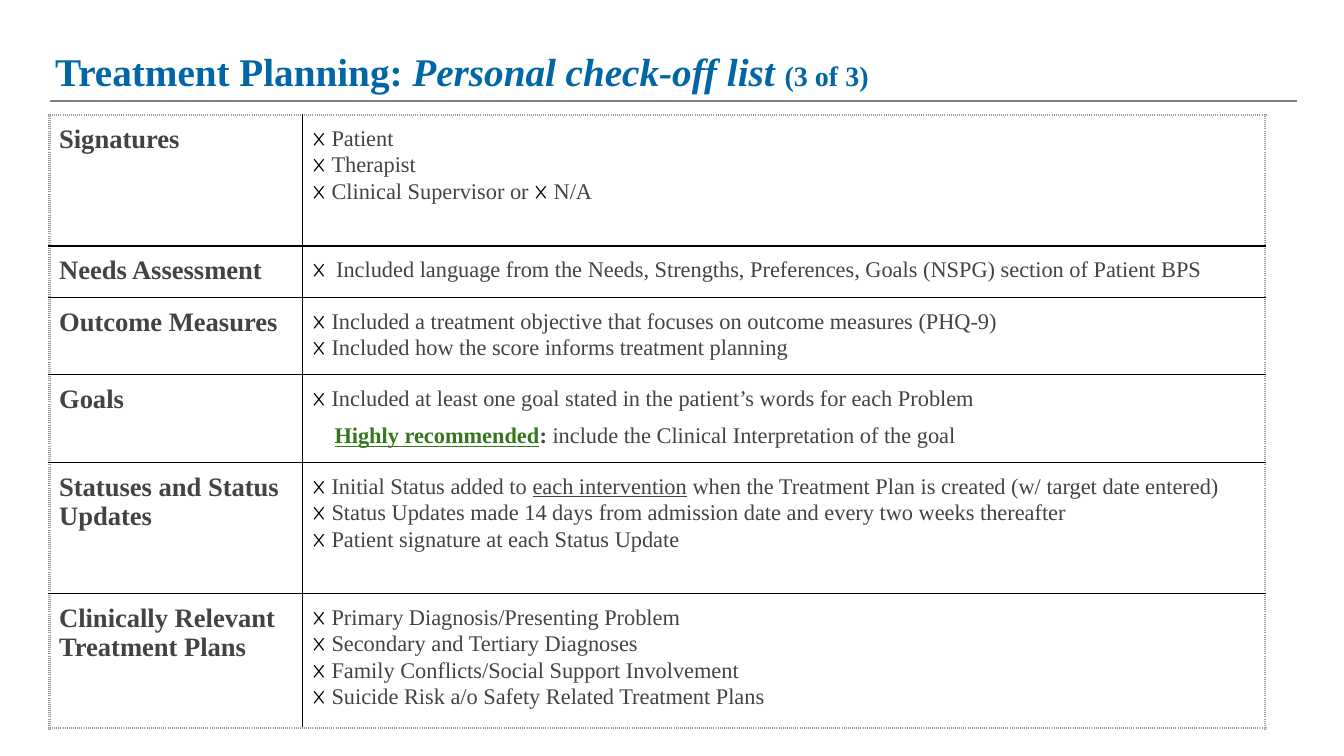
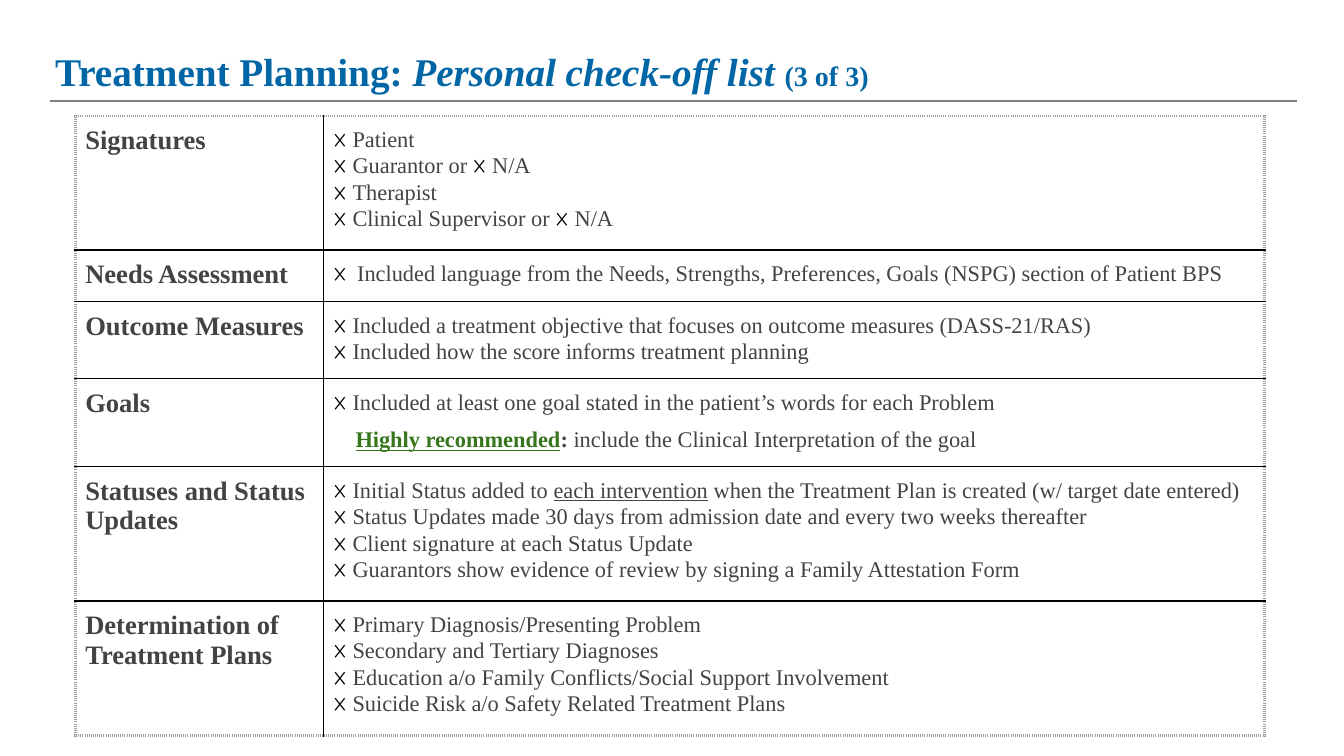
"""Build two treatment planning check-off slides."""
from lxml import etree
from pptx import Presentation
from pptx.dml.color import RGBColor
from pptx.enum.shapes import MSO_CONNECTOR
from pptx.enum.text import MSO_ANCHOR
from pptx.oxml.ns import qn
from pptx.util import Cm, Pt

STRAIGHT = MSO_CONNECTOR.STRAIGHT
TOP = MSO_ANCHOR.TOP
BLUE = RGBColor(0x00, 0x66, 0xA6)
GREEN = RGBColor(0x38, 0x76, 0x1D)
CHARCOAL = RGBColor(0x43, 0x43, 0x43)
BLACK = RGBColor(0x00, 0x00, 0x00)
GREY = RGBColor(0x7F, 0x7F, 0x7F)
FRAME_GREY = RGBColor(0x9E, 0x9E, 0x9E)
FONT = "Times New Roman"
MARK = "𐄂 "
INSET = Cm(0.25)
TAB_STOP = Cm(0.6)

STYLES = {
    "title": {"size": Pt(28), "color": BLUE, "bold": True},
    "subtitle": {"size": Pt(28), "color": BLUE, "bold": True, "italic": True},
    "count": {"size": Pt(20), "color": BLUE, "bold": True},
    "label": {"size": Pt(19), "color": CHARCOAL, "bold": True},
    "mark": {"size": Pt(17), "color": BLACK},
    "item": {"size": Pt(16), "color": CHARCOAL},
    "underlined": {"size": Pt(16), "color": CHARCOAL, "underline": True},
    "advice": {"size": Pt(16), "color": GREEN, "bold": True, "underline": True},
    "colon": {"size": Pt(16), "color": CHARCOAL, "bold": True},
}
INNER_BORDER = (Pt(1), BLACK, "solid")
OUTER_BORDER = (Pt(2.25), FRAME_GREY, "dot")

TITLE = [
    ("title", "Treatment Planning: "),
    ("subtitle", "Personal check-off list "),
    ("count", "(3 of 3)"),
]
SUPERVISOR = "Clinical Supervisor or 𐄂 N/A"
NEEDS = ("Needs Assessment", [
    "\tIncluded language from the Needs, Strengths, Preferences, Goals (NSPG) section of Patient BPS",
])
SCORE = "Included how the score informs treatment planning"
GOALS = ("Goals", [
    "Included at least one goal stated in the patient’s words for each Problem",
    [
        ("advice", "Highly recommended"),
        ("colon", ": "),
        ("item", "include the Clinical Interpretation of the goal"),
    ],
])
STATUSES = "Statuses and Status Updates"
INITIAL_STATUS = [
    ("mark", MARK),
    ("item", "Initial Status added to "),
    ("underlined", "each intervention"),
    ("item", " when the Treatment Plan is created (w/ target date entered)"),
]
DIAGNOSES = ["Primary Diagnosis/Presenting Problem", "Secondary and Tertiary Diagnoses"]
SAFETY = "Suicide Risk a/o Safety Related Treatment Plans"
ROW_HEIGHTS = [Cm(3.3), Cm(1.27), Cm(1.9), Cm(2.18), Cm(3.3), Cm(3.3)]

CHECKLISTS = [
    {
        "corner": (Cm(1.24), Cm(2.9)),
        "widths": (Cm(6.38), Cm(24.26)),
        "rows": [
            ("Signatures", ["Patient", "Therapist", SUPERVISOR]),
            NEEDS,
            ("Outcome Measures", [
                "Included a treatment objective that focuses on outcome measures (PHQ-9)",
                SCORE,
            ]),
            GOALS,
            (STATUSES, [
                INITIAL_STATUS,
                "Status Updates made 14 days from admission date and every two weeks thereafter",
                "Patient signature at each Status Update",
            ]),
            ("Clinically Relevant Treatment Plans", [
                *DIAGNOSES,
                "Family Conflicts/Social Support Involvement",
                SAFETY,
            ]),
        ],
    },
    {
        "corner": (Cm(1.9), Cm(2.92)),
        "widths": (Cm(6.25), Cm(23.72)),
        "rows": [
            ("Signatures", ["Patient", "Guarantor or 𐄂 N/A", "Therapist", SUPERVISOR]),
            NEEDS,
            ("Outcome Measures", [
                "Included a treatment objective that focuses on outcome measures (DASS-21/RAS)",
                SCORE,
            ]),
            GOALS,
            (STATUSES, [
                INITIAL_STATUS,
                "Status Updates made 30 days from admission date and every two weeks thereafter",
                "Client signature at each Status Update",
                "Guarantors show evidence of review by signing a Family Attestation Form",
            ]),
            ("Determination of Treatment Plans", [
                *DIAGNOSES,
                "Education a/o Family Conflicts/Social Support Involvement",
                SAFETY,
            ]),
        ],
    },
]


def expand(line):
    """Turn a plain item into marked spans; keep a styled line as it is."""
    if not isinstance(line, str):
        return line
    return [span for part in line.split(MARK) for span in (("mark", MARK), ("item", part))]


def write_lines(frame, lines):
    """Write one paragraph for each list of styled spans."""
    for index, spans in enumerate(lines):
        para = frame.add_paragraph() if index else frame.paragraphs[0]
        properties = para._p.get_or_add_pPr()
        if any("\t" in text for _, text in spans):
            tabs = etree.SubElement(properties, qn("a:tabLst"))
            etree.SubElement(tabs, qn("a:tab"), pos=str(TAB_STOP), algn="l")
        if spans[0][0] == "advice":
            properties.set("marL", str(Cm(0.56)))
            para.space_before = Pt(9)
        for style, text in spans:
            span = para.add_run()
            span.text = text
            span.font.name = FONT
            for name, value in STYLES[style].items():
                if name == "color":
                    span.font.color.rgb = value
                else:
                    setattr(span.font, name, value)


def set_insets(target, top=INSET):
    """Give a frame or cell its margins and top anchor."""
    values = {"margin_left": INSET, "margin_right": INSET, "margin_top": top,
              "margin_bottom": INSET, "vertical_anchor": TOP}
    for name, value in values.items():
        setattr(target, name, value)


def add_border(cell, side, border):
    """Draw one side of a table cell."""
    width, color, dash = border
    line = etree.SubElement(cell._tc.get_or_add_tcPr(), qn(f"a:ln{side}"), w=str(width))
    fill = etree.SubElement(line, qn("a:solidFill"))
    etree.SubElement(fill, qn("a:srgbClr"), val=str(color))
    etree.SubElement(line, qn("a:prstDash"), val=dash)


def add_heading(page):
    """Add the shared rule and title."""
    rule = page.shapes.add_connector(STRAIGHT, Cm(32.69), Cm(2.54), Cm(1.27), Cm(2.54))
    rule.line.color.rgb = GREY
    rule.line.width = Pt(1.5)
    etree.SubElement(rule._element.spPr, qn("a:effectLst"))
    box = page.shapes.add_textbox(Cm(1.14), Cm(0.81), Cm(24.79), Cm(1.3))
    box.text_frame.word_wrap = True
    set_insets(box.text_frame, Cm(0.38))
    write_lines(box.text_frame, [TITLE])


def add_checklist(page, corner, widths, rows):
    """Add a two-column table with a dotted frame."""
    table = page.shapes.add_table(
        len(rows), len(widths), *corner, sum(widths), sum(ROW_HEIGHTS)).table
    table.first_row = False
    table.horz_banding = False
    for column, width in zip(table.columns, widths):
        column.width = width
    for row, height in zip(table.rows, ROW_HEIGHTS):
        row.height = height
    last_row, last_column = len(rows) - 1, len(widths) - 1
    for row_index, (label, items) in enumerate(rows):
        contents = ([[("label", label)]], [expand(item) for item in items])
        for column_index, lines in enumerate(contents):
            cell = table.cell(row_index, column_index)
            set_insets(cell)
            write_lines(cell.text_frame, lines)
            edges = {"L": column_index == 0, "R": column_index == last_column,
                     "T": row_index == 0, "B": row_index == last_row}
            for side, is_outer in edges.items():
                add_border(cell, side, OUTER_BORDER if is_outer else INNER_BORDER)
            cell.fill.background()


def main():
    """Build and save the deck."""
    deck = Presentation()
    deck.slide_width, deck.slide_height = Cm(33.87), Cm(19.05)
    for checklist in CHECKLISTS:
        page = deck.slides.add_slide(deck.slide_layouts[6])
        add_heading(page)
        add_checklist(page, **checklist)
    deck.save("out.pptx")


if __name__ == "__main__":
    main()
